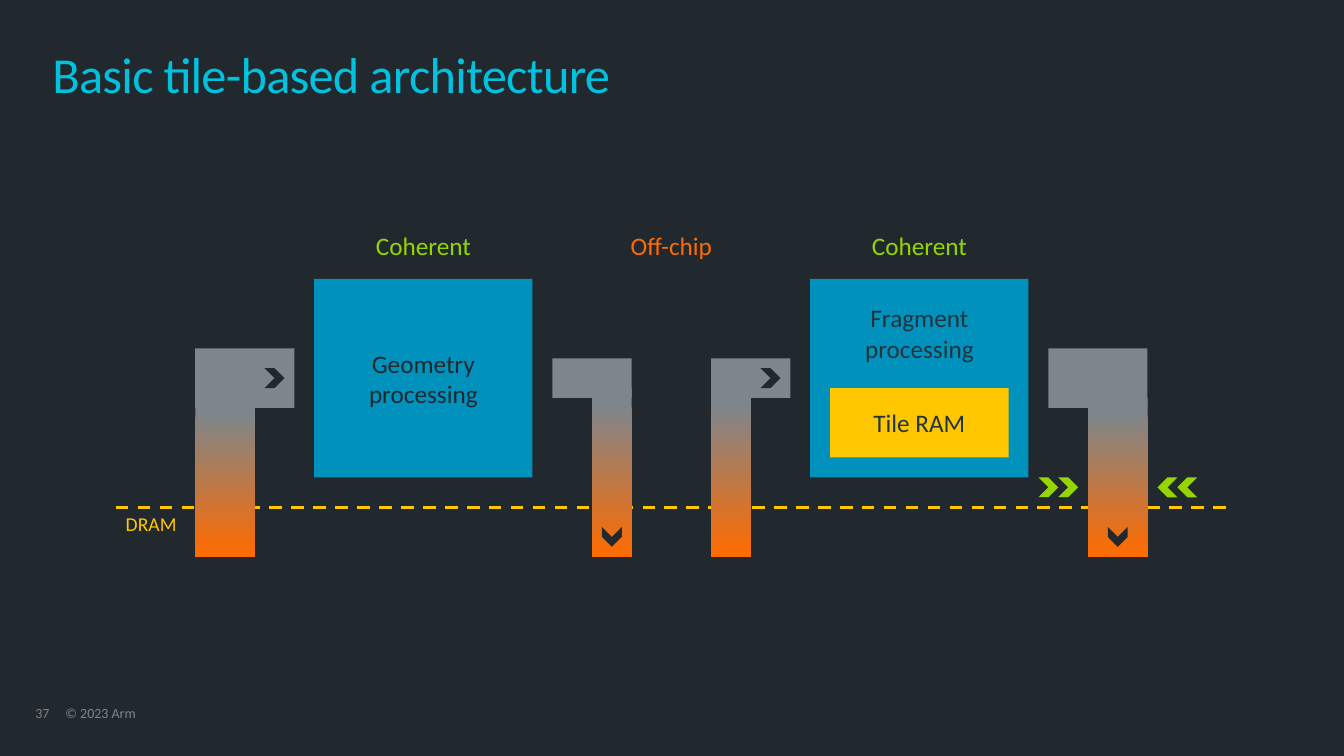
"""Build the slide on the basic tile-based architecture."""
from lxml.etree import SubElement
from pptx import Presentation
from pptx.dml.color import RGBColor
from pptx.enum.dml import MSO_LINE
from pptx.enum.shapes import MSO_CONNECTOR, MSO_SHAPE
from pptx.enum.text import MSO_ANCHOR as Anchor, MSO_AUTO_SIZE as Auto, PP_ALIGN as Align
from pptx.oxml.ns import qn
from pptx.util import Cm, Pt

DARK, INK, GREY, BLUE = "21292F", "23353C", "7D868C", "0091BD"
CYAN, GREEN, ORANGE, GOLD = "00C1DE", "95D600", "FF6B00", "FFC700"
LEFT, TOP = 2.92, 7.03

TITLE = "Basic tile-based architecture"
BLOCKS = [
    ("Geometry\nprocessing", (5, 0, 5.5, 5), BLUE, DARK, Anchor.MIDDLE, 0.4),
    ("Fragment\nprocessing", (17.5, 0, 5.5, 5), BLUE, INK, Anchor.TOP, 0.6),
    ("Tile RAM", (18, 2.75, 4.5, 1.75), GOLD, INK, Anchor.MIDDLE, 0.13),
]
LABELS = [("Coherent", 5, 5.5, GREEN), ("Off-chip", 12, 4, ORANGE),
          ("Coherent", 17.5, 5.5, GREEN)]
PIPES = [(2, 1.5, 2), (12, 1, 11), (15, 1, 15), (24.5, 1.5, 23.5)]
ARROWS = [
    (3.75, 2.25, 0, DARK), (16.25, 2.25, 0, DARK),
    (12.25, 6.25, 90, DARK), (25, 6.25, 90, DARK),
    (23.75, 5, 0, GREEN), (23.25, 5, 0, GREEN),
    (26.75, 5, 180, GREEN), (26.25, 5, 180, GREEN),
]
FOOTER = [("37", 0.89, 0.86, "7F7F7F"), ("© 2023 Arm", 1.65, 12.88, GREY)]


def rgb(code):
    return RGBColor.from_string(code)


def place(x, y, w, h):
    return Cm(LEFT + x), Cm(TOP + y), Cm(w), Cm(h)


def write(shape, text, size, color, align=Align.LEFT, anchor=Anchor.TOP, pads=(0, 0, 0, 0)):
    frame = shape.text_frame
    frame.word_wrap = True
    frame.auto_size = Auto.NONE
    frame.vertical_anchor = anchor
    frame.margin_left, frame.margin_top, frame.margin_right, frame.margin_bottom = map(Cm, pads)
    para = frame.paragraphs[0]
    para.text = text
    para.alignment = align
    para.font.name = "Calibri"
    para.font.size = Pt(size)
    para.font.color.rgb = rgb(color)
    return para


def draw(slide, kind, box, color, turn=0):
    shape = slide.shapes.add_shape(kind, *place(*box))
    shape.shadow.inherit = False
    shape.line.fill.background()
    shape.fill.solid()
    shape.fill.fore_color.rgb = rgb(color)
    shape.rotation = turn
    return shape


def add_pipe(slide, x, wide, head):
    high = 1.75 if wide > 1 else 2
    start = 3 if wide > 1 else 2.75
    long = 7 - start
    shift = (long - wide) / 2
    pipe = draw(slide, MSO_SHAPE.RECTANGLE, (x - shift, start + shift, long, wide), GREY, 90)
    pipe.fill.gradient()
    pipe.fill.gradient_angle = 0
    for stop, (spot, color) in zip(pipe.fill.gradient_stops, [(0.1, GREY), (1, ORANGE)]):
        stop.position = spot
        stop.color.rgb = rgb(color)
    draw(slide, MSO_SHAPE.RECTANGLE, (head, high, wide + 1, wide), GREY)


def add_dram(slide):
    x, y, w, _ = place(0, 5.75, 28, 0)
    line = slide.shapes.add_connector(MSO_CONNECTOR.STRAIGHT, x, y, x + w, y)
    line.line.color.rgb = rgb(GOLD)
    line.line.width = Pt(2.25)
    line.line.dash_style = MSO_LINE.DASH
    SubElement(line._element.spPr, qn("a:effectLst"))
    box = slide.shapes.add_textbox(*place(0, 5.75, 2, 0.86))
    write(box, "DRAM", 14, GOLD, pads=(0.25, 0.13, 0.25, 0.13))


def main():
    deck = Presentation()
    deck.slide_width, deck.slide_height = Cm(33.87), Cm(19.05)
    slide = deck.slides.add_slide(deck.slide_layouts[5])
    slide.background.fill.solid()
    slide.background.fill.fore_color.rgb = rgb(DARK)

    title = slide.shapes.title
    title.left, title.top, title.width, title.height = Cm(1.32), Cm(1.32), Cm(31.2), Cm(1.45)
    para = write(title, TITLE, 36, CYAN)
    para.line_spacing = 0.85
    para.runs[0]._r.get_or_add_rPr().set("spc", "-50")

    for text, x, wide, color in FOOTER:
        box = slide.shapes.add_textbox(Cm(x), Cm(17.81), Cm(wide), Cm(0.38))
        write(box, text, 10, color).line_spacing = 0.9

    add_dram(slide)
    for text, box, fill, color, anchor, pad in BLOCKS:
        block = draw(slide, MSO_SHAPE.RECTANGLE, box, fill)
        low = min(pad, 0.4)
        write(block, text, 18, color, Align.CENTER, anchor, (0.25, pad, 0.25, low))
    for text, x, wide, color in LABELS:
        label = slide.shapes.add_textbox(*place(x, -1.25, wide, 0.8))
        write(label, text, 18, color, Align.CENTER, Anchor.MIDDLE, (0.25, 0.13, 0.25, 0.13))
    for pipe in PIPES:
        add_pipe(slide, *pipe)
    for x, y, turn, color in ARROWS:
        draw(slide, MSO_SHAPE.CHEVRON, (x, y, 0.5, 0.5), color, turn)
    deck.save("out.pptx")


if __name__ == "__main__":
    main()
